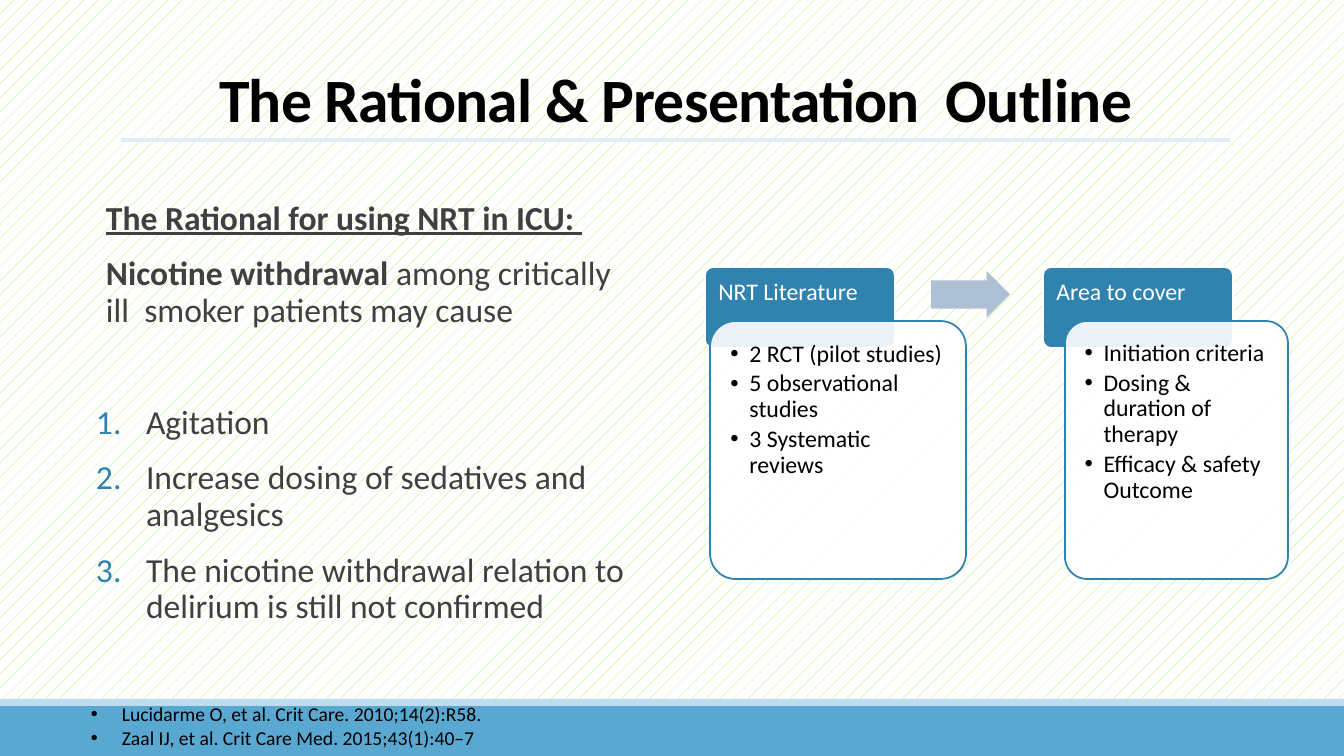
import pptx
import pptx.util
import pptx.dml.color
import pptx.enum.dml
import pptx.enum.shapes
import pptx.enum.text
import pptx.oxml.ns
import pptx.oxml.xmlchemy

RGBColor = pptx.dml.color.RGBColor
MSO_SHAPE = pptx.enum.shapes.MSO_SHAPE
MSO_ANCHOR = pptx.enum.text.MSO_ANCHOR
PP_ALIGN = pptx.enum.text.PP_ALIGN
Pt = pptx.util.Pt
OxmlElement = pptx.oxml.xmlchemy.OxmlElement

PX = 914400 / 100.8
FONT = "Calibri"
BLACK = RGBColor(0x00, 0x00, 0x00)
WHITE = RGBColor(0xFF, 0xFF, 0xFF)
GREY = RGBColor(0x40, 0x40, 0x40)
GREEN = RGBColor(0xA7, 0xEA, 0x52)
BLUE = RGBColor(0x30, 0x83, 0xAF)
BAR_BLUE = RGBColor(0x59, 0xA8, 0xD1)
STRIP_BLUE = RGBColor(0xBD, 0xDC, 0xED)
RULE_BLUE = RGBColor(0xDE, 0xEE, 0xF6)
ARROW_BLUE = RGBColor(0xAE, 0xC1, 0xD4)


def add_box(kind, box, fill, line=None):
    shape = slide.shapes.add_shape(kind, *[round(value * PX) for value in box])
    shape.shadow.inherit = False
    shape.fill.solid()
    shape.fill.fore_color.rgb = fill
    if line is None:
        shape.line.fill.background()
    else:
        shape.line.color.rgb = line
        shape.line.width = Pt(1.25)
    return shape


def set_bullet(paragraph, margin, hanging, tag, **attributes):
    properties = paragraph._p.get_or_add_pPr()
    properties.set("marL", str(round(margin * PX)))
    properties.set("indent", str(-round(hanging * PX)))
    if tag == "a:buAutoNum":
        color = OxmlElement("a:buClr")
        value = OxmlElement("a:srgbClr")
        value.set("val", str(BLUE))
        color.append(value)
        properties.append(color)
        font = OxmlElement("a:buFont")
        font.set("typeface", FONT)
        properties.append(font)
    elif tag == "a:buChar":
        font = OxmlElement("a:buFont")
        font.set("typeface", "Arial")
        properties.append(font)
    bullet = OxmlElement(tag)
    for name, setting in attributes.items():
        bullet.set(name, setting)
    properties.append(bullet)


presentation = pptx.Presentation()
presentation.slide_width = round(1344 * PX)
presentation.slide_height = round(756 * PX)
slide = presentation.slides.add_slide(presentation.slide_layouts[1])

background = slide.background.fill
background.patterned()
background.pattern = pptx.enum.dml.MSO_PATTERN.PERCENT_5
background.fore_color.rgb = GREEN
background.back_color.rgb = WHITE

add_box(MSO_SHAPE.RECTANGLE, (0, 706, 1344, 50), BAR_BLUE)
add_box(MSO_SHAPE.RECTANGLE, (0, 699, 1344, 7), STRIP_BLUE)

rule = slide.shapes.add_connector(
    pptx.enum.shapes.MSO_CONNECTOR.STRAIGHT,
    *[round(value * PX) for value in (121, 140, 1230, 140)])
rule.line.color.rgb = RULE_BLUE
rule.line.width = Pt(2.25)
rule._element.spPr.append(OxmlElement("a:effectLst"))

title = slide.shapes.title
body = slide.placeholders[1]
references = slide.shapes.add_textbox(0, 0, 0, 0)
for holder, box, anchor in (
        (title, (121, 31, 1109, 109), MSO_ANCHOR.BOTTOM),
        (body, (96, 196, 544, 456), MSO_ANCHOR.TOP),
        (references, (81, 697, 671, 57), MSO_ANCHOR.TOP)):
    holder.left, holder.top, holder.width, holder.height = [round(value * PX) for value in box]
    holder.text_frame.word_wrap = True
    holder.text_frame.auto_size = pptx.enum.text.MSO_AUTO_SIZE.NONE
    holder.text_frame.vertical_anchor = anchor

paragraph = title.text_frame.paragraphs[0]
paragraph.alignment = PP_ALIGN.CENTER
paragraph.line_spacing = 0.85
run = paragraph.add_run()
run.text = "The Rational & Presentation  Outline"
run.font.name = FONT
run.font.size = Pt(44)
run.font.bold = True
run.font.color.rgb = BLACK
run._r.get_or_add_rPr().set("spc", "-50")

body.text_frame.margin_left = body.text_frame.margin_right = 0
rationale = [
    (False, 0, [("The Rational for using NRT in ICU: ", True, True)]),
    (False, 12, [("Nicotine withdrawal ", True, False),
                 ("among critically ill  smoker patients may cause", False, False)]),
    (True, 52, [("Agitation", False, False)]),
    (True, 12, [("Increase dosing of sedatives and analgesics", False, False)]),
    (True, 12, [("The nicotine withdrawal relation to delirium is still not confirmed", False, False)]),
]
for index, (numbered, space_before, runs) in enumerate(rationale):
    paragraph = body.text_frame.add_paragraph() if index else body.text_frame.paragraphs[0]
    if numbered:
        set_bullet(paragraph, 50, 50, "a:buAutoNum", type="arabicPeriod")
    else:
        set_bullet(paragraph, 10, 0, "a:buNone")
    paragraph.line_spacing = 0.9
    paragraph.space_before = Pt(space_before)
    paragraph.space_after = Pt(2)
    for text, bold, underline in runs:
        run = paragraph.add_run()
        run.text = text
        run.font.name = FONT
        run.font.size = Pt(24)
        run.font.bold = bold
        run.font.underline = underline
        run.font.color.rgb = GREY

bullet_lists = [(references, 31, 14, 1.0, 0, [
    "Lucidarme O, et al. Crit Care. 2010;14(2):R58.",
    "Zaal IJ, et al. Crit Care Med. 2015;43(1):40–7"])]
cards = [
    ("NRT Literature", 705, 710, 256,
     ["2 RCT (pilot studies)", "5 observational studies", "3 Systematic reviews"]),
    ("Area to cover", 1043, 1065, 223,
     ["Initiation criteria", "Dosing & duration of therapy", "Efficacy & safety Outcome"]),
]
for heading, header_left, panel_left, panel_width, items in cards:
    header = add_box(MSO_SHAPE.ROUNDED_RECTANGLE, (header_left, 267, 190, 81), BLUE, WHITE)
    panel = add_box(MSO_SHAPE.ROUNDED_RECTANGLE, (panel_left, 321, panel_width, 258), WHITE, BLUE)
    alpha = OxmlElement("a:alpha")
    alpha.set("val", "90000")
    panel._element.spPr.find(pptx.oxml.ns.qn("a:solidFill"))[0].append(alpha)
    for shape, margin in ((header, 11), (panel, 13)):
        shape.adjustments[0] = 0.1
        frame = shape.text_frame
        frame.word_wrap = True
        frame.vertical_anchor = MSO_ANCHOR.TOP
        frame.margin_left = frame.margin_right = round(margin * PX)
        frame.margin_top = frame.margin_bottom = round(margin * PX)
    paragraph = header.text_frame.paragraphs[0]
    paragraph.alignment = PP_ALIGN.LEFT
    paragraph.line_spacing = 0.9
    run = paragraph.add_run()
    run.text = heading
    run.font.name = FONT
    run.font.size = Pt(17)
    run.font.color.rgb = WHITE
    bullet_lists.append((panel, 19, 17, 0.9, 3, items))

for holder, indent, size, spacing, space_after, items in bullet_lists:
    for index, item in enumerate(items):
        paragraph = holder.text_frame.add_paragraph() if index else holder.text_frame.paragraphs[0]
        set_bullet(paragraph, indent, indent, "a:buChar", char="•")
        paragraph.alignment = PP_ALIGN.LEFT
        paragraph.line_spacing = spacing
        paragraph.space_after = Pt(space_after)
        run = paragraph.add_run()
        run.text = item
        run.font.name = FONT
        run.font.size = Pt(size)
        run.font.color.rgb = BLACK

arrow = add_box(MSO_SHAPE.RIGHT_ARROW, (931, 271, 79, 47), ARROW_BLUE)
arrow.adjustments[0] = 0.6
arrow.adjustments[1] = 0.5

presentation.save("out.pptx")
